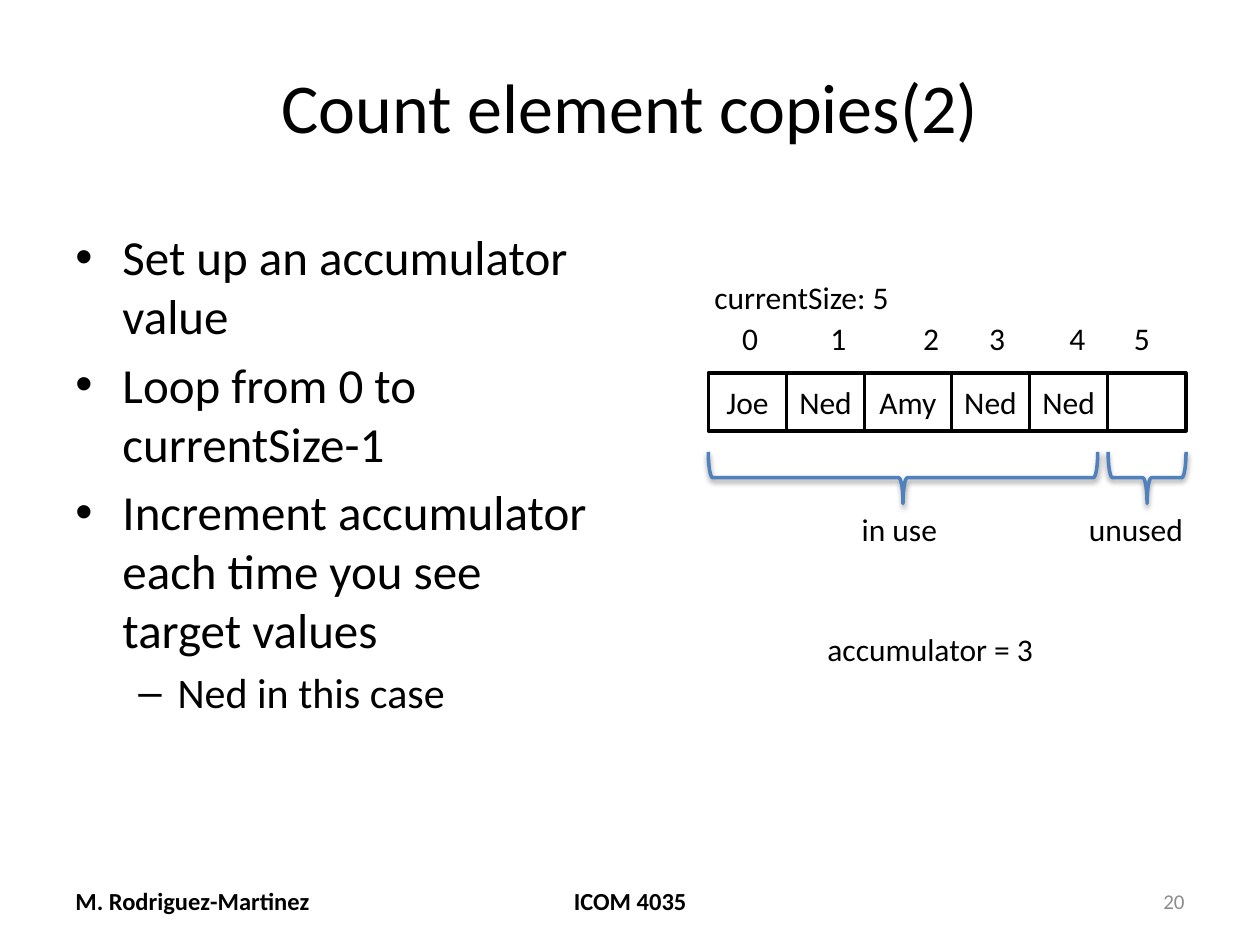
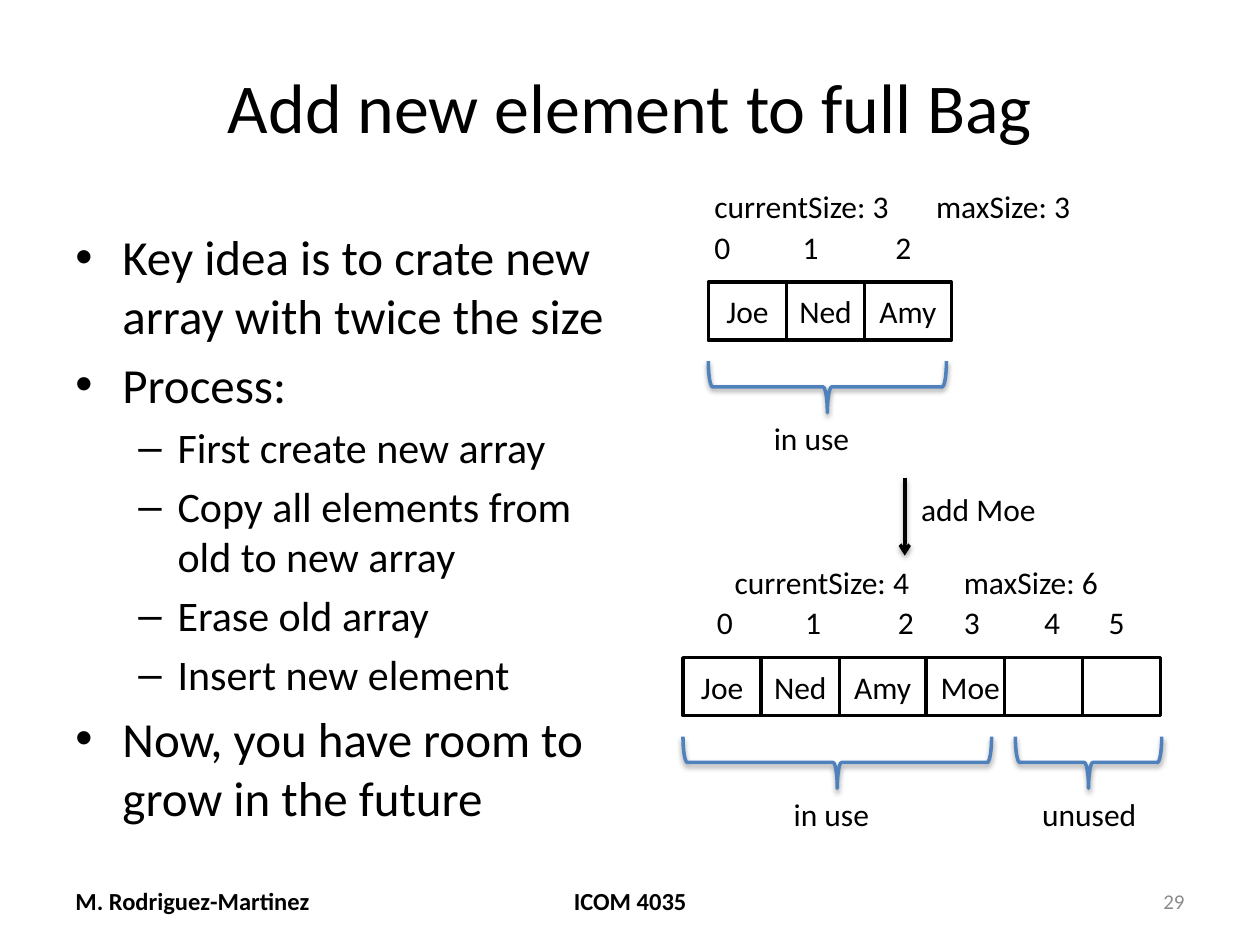
from itertools import accumulate
from pptx import Presentation
from pptx.dml.color import RGBColor
from pptx.enum.shapes import MSO_CONNECTOR, MSO_SHAPE
from pptx.enum.text import MSO_ANCHOR, PP_ALIGN
from pptx.oxml.ns import qn
from pptx.util import Cm, Pt
from lxml.etree import SubElement

BLACK, WHITE, BLUE, GREY = "000000", "FFFFFF", "4F81BD", "8C8C8C"
TITLE = {"size": Pt(40)}
BODY = [{"size": Pt(28)}, {"size": Pt(24)}]
LABEL = {"size": Pt(18)}
FOOT = {"size": Pt(14), "bold": True}
PAGE = {"size": Pt(12)}

# Bullet, left margin and hanging indent of each level
LEVELS = [("•", 0.95, -0.95), ("–", 2.06, -0.79)]

# Array cells, in cm
CELL_W, CELL_H = 1.575, 1.17
WIDTHS = {"Amy": 1.75}
TABS = [1.78, 3.65, 4.98, 6.6, 7.9]
BRACE_H = 1.04


def paint(code):
    return RGBColor.from_string(code)


def put(part, text, style, color=BLACK, align=PP_ALIGN.LEFT):
    """Write one styled run in a paragraph."""
    part.alignment = align
    run = part.add_run()
    run.text = text
    for key, value in {"name": "Calibri", **style}.items():
        setattr(run.font, key, value)
    run.font.color.rgb = paint(color)


def frame(slide, box, anchor=MSO_ANCHOR.TOP, wrap=True):
    area = slide.shapes.add_textbox(*map(Cm, box)).text_frame
    area.word_wrap = wrap
    area.vertical_anchor = anchor
    return area


def label(slide, left, top, width, text):
    area = frame(slide, (left, top, width, 1.02), wrap=False)
    put(area.paragraphs[0], text, LABEL)


def stroke(shape, color):
    shape.line.color.rgb = paint(color)
    shape.line.width = Pt(2)


def shade(shape):
    """Cast a soft shadow straight down."""
    effects = SubElement(shape.element.spPr, qn("a:effectLst"))
    outer = SubElement(effects, qn("a:outerShdw"), blurRad="40000",
                       dist="20000", dir="5400000", rotWithShape="0")
    tint = SubElement(outer, qn("a:srgbClr"), val=BLACK)
    SubElement(tint, qn("a:alpha"), val="38000")


def bullets(slide, box, items):
    area = frame(slide, box)
    for i, (level, text) in enumerate(items):
        part = area.add_paragraph() if i else area.paragraphs[0]
        put(part, text, BODY[level])
        part.level = level
        mark, left, hang = LEVELS[level]
        props = part._p.get_or_add_pPr()
        props.set("marL", str(Cm(left)))
        props.set("indent", str(Cm(hang)))
        space = SubElement(props, qn("a:spcBef"))
        SubElement(space, qn("a:spcPct"), val="20000")
        SubElement(props, qn("a:buFont"), typeface="Arial")
        SubElement(props, qn("a:buChar"), char=mark)


def base(deck, title, page, items):
    """Title, bullets and footer that every slide has."""
    slide = deck.slides.add_slide(deck.slide_layouts[6])
    mid = MSO_ANCHOR.MIDDLE
    head = frame(slide, (1.27, 0.76, 22.86, 2.72), mid)
    put(head.paragraphs[0], title, TITLE, align=PP_ALIGN.CENTER)
    bullets(slide, (1.27, 4.45, 11.23, 12.57), items)
    for left, width, text, style, color, align in [
        (1.27, 5.92, "M. Rodriguez-Martinez", FOOT, BLACK, PP_ALIGN.LEFT),
        (8.68, 8.05, "ICOM 4035", FOOT, BLACK, PP_ALIGN.CENTER),
        (18.21, 5.92, page, PAGE, GREY, PP_ALIGN.RIGHT),
    ]:
        foot = frame(slide, (left, 17.65, width, 1.02), mid)
        put(foot.paragraphs[0], text, style, color, align)
    return slide


def cell(slide, box, name):
    shape = slide.shapes.add_shape(MSO_SHAPE.RECTANGLE, *map(Cm, box))
    shape.shadow.inherit = False
    shape.fill.solid()
    shape.fill.fore_color.rgb = paint(WHITE)
    stroke(shape, BLACK)
    area = shape.text_frame
    area.margin_left = area.margin_right = 0
    area.vertical_anchor = MSO_ANCHOR.MIDDLE
    if name:
        put(area.paragraphs[0], name, LABEL, align=PP_ALIGN.CENTER)


def ticks(slide, left, top, count):
    """Index numbers, one tab stop apart."""
    stops = TABS[:count - 1]
    area = frame(slide, (left, top, 8.84 if count > 3 else 4.52, 1.02))
    part = area.paragraphs[0]
    put(part, "\t".join(map(str, range(count))), LABEL)
    tabs = SubElement(part._p.get_or_add_pPr(), qn("a:tabLst"))
    for stop in stops:
        SubElement(tabs, qn("a:tab"), pos=str(Cm(stop)), algn="l")


def brace(slide, left, top, span):
    """Left brace turned to open upward over the span."""
    shape = slide.shapes.add_shape(
        MSO_SHAPE.LEFT_BRACE, Cm(left + (span - BRACE_H) / 2),
        Cm(top + (BRACE_H - span) / 2), Cm(BRACE_H), Cm(span))
    shape.rotation = 270
    shape.fill.background()
    stroke(shape, BLUE)
    shade(shape)


def array(slide, left, top, names, shift, heads, spans, wide=None):
    """Cells with heads and numbers above, braces below."""
    steps = [WIDTHS.get(name, CELL_W) for name in names]
    starts = accumulate(steps[:-1], initial=left)
    for x, step, name in zip(starts, steps, names):
        width = (wide or {}).get(name, step)
        cell(slide, (x, top, width, CELL_H), name)
    ticks(slide, left + shift, top - 1.22, len(names))
    for x, width, text in heads:
        label(slide, left + x, top - 2.04, width, text)
    for start, span, x, width, text in spans:
        brace(slide, left + start, top + 1.59, span)
        label(slide, left + x, top + 2.64, width, text)


def arrow(slide, left, top, length, text):
    line = slide.shapes.add_connector(
        MSO_CONNECTOR.STRAIGHT, Cm(left), Cm(top), Cm(left), Cm(top + length))
    stroke(line, BLACK)
    SubElement(line.line._get_or_add_ln(), qn("a:tailEnd"), type="arrow")
    shade(line)
    label(slide, left + 0.08, top + 0.13, 2.84, text)


def count_slide(deck):
    slide = base(deck, "Count element copies(2)", "20", [
        (0, "Set up an accumulator value"),
        (0, "Loop from 0 to currentSize-1"),
        (0, "Increment accumulator each time you see target values"),
        (1, "Ned in this case"),
    ])
    array(slide, 14.28, 7.52, ["Joe", "Ned", "Amy", "Ned", "Ned", ""], 0.43,
          [(-0.13, 4.09, "currentSize: 5")],
          [(0, 7.85, 2.84, 2.06, "in use"), (8.06, 1.57, 7.42, 2.44, "unused")])
    label(slide, 16.43, 12.57, 4.72, "accumulator = 3")


def grow_slide(deck):
    slide = base(deck, "Add new element to full Bag", "29", [
        (0, "Key idea is to crate new array with twice the size"),
        (0, "Process:"),
        (1, "First create new array"),
        (1, "Copy all elements from old to new array"),
        (1, "Erase old array"),
        (1, "Insert new element"),
        (0, "Now, you have room to grow in the future"),
    ])
    # Full array
    array(slide, 14.28, 5.69, ["Joe", "Ned", "Amy"], -0.13,
          [(-0.13, 4.09, "currentSize: 3"), (4.34, 3.28, "maxSize: 3")],
          [(0, 4.8, 1.07, 2.06, "in use")])
    arrow(slide, 18.24, 9.63, 1.57, "add Moe")
    # Array of twice the size
    array(slide, 13.77, 13.26, ["Joe", "Ned", "Amy", "Moe", "", ""], 0.43,
          [(0.79, 4.09, "currentSize: 4"), (5.41, 3.28, "maxSize: 6")],
          [(0, 6.22, 1.98, 2.06, "in use"), (6.7, 2.95, 6.99, 2.44, "unused")],
          {"Moe": 1.78})


def main():
    deck = Presentation()
    deck.slide_width, deck.slide_height = Cm(25.4), Cm(19.05)
    count_slide(deck)
    grow_slide(deck)
    deck.save("out.pptx")


if __name__ == "__main__":
    main()
